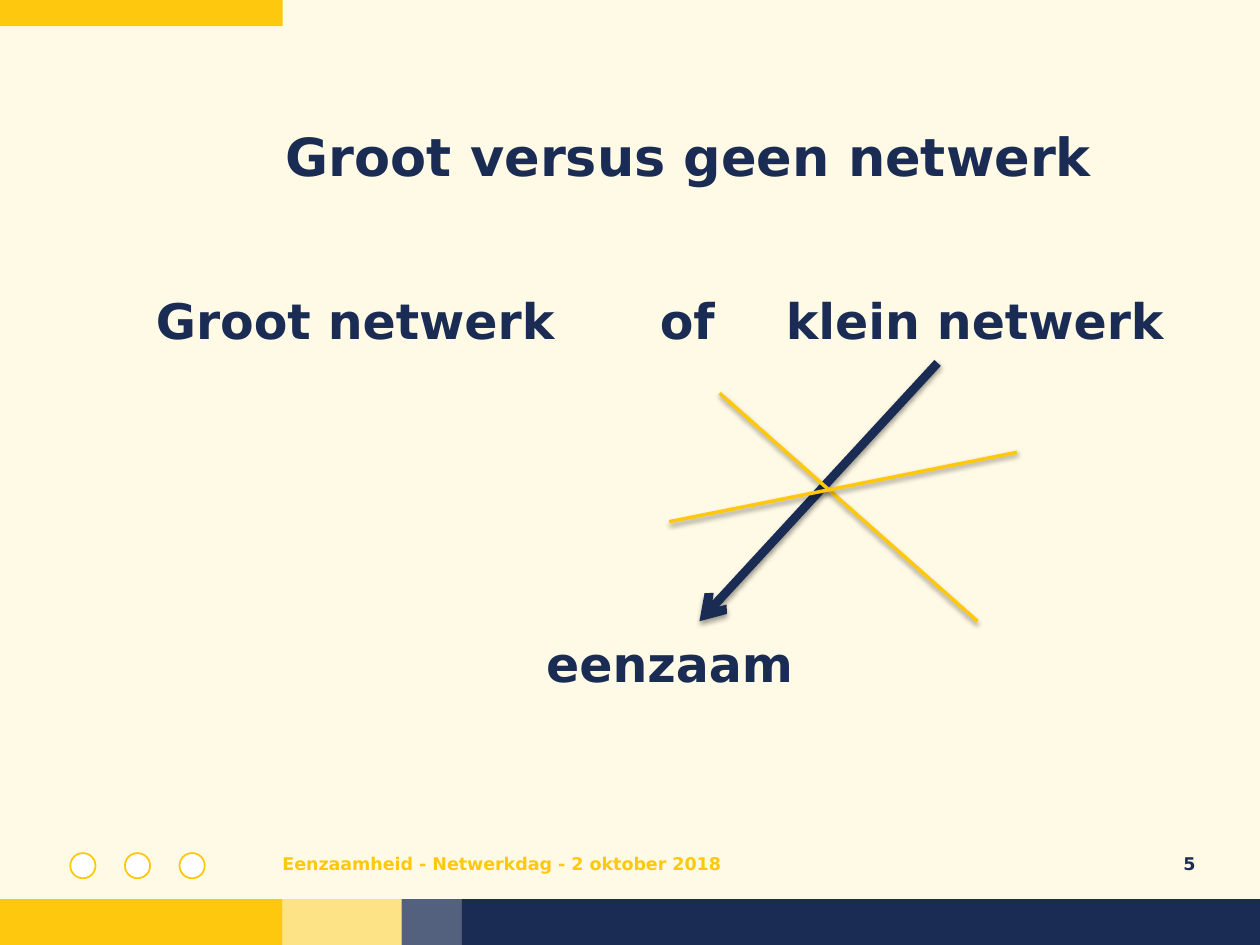
from dataclasses import dataclass

from lxml import etree
from pptx import Presentation
from pptx.dml.color import RGBColor
from pptx.enum import shapes, text
from pptx.oxml import ns
from pptx.util import Pt


@dataclass(frozen=True)
class Theme:
    """Colours, font and type sizes of the slide."""
    font: str = "DejaVu Sans"
    navy: str = "1A2C54"
    slate: str = "53607E"
    yellow: str = "FEC80F"
    ring: str = "FEC709"
    pale: str = "FEE386"
    cream: str = "FFFAE5"
    white: str = "FFFFFF"
    title: int = 30
    body: int = 28
    small: int = 10


T = Theme()


def rgb(value):
    """Return the colour for a hex string."""
    return RGBColor.from_string(value)


def add_plain(s, kind, box, fill, line=None):
    """Add a flat preset shape in the given box."""
    sp = s.shapes.add_shape(kind, *map(Pt, box))
    sp.shadow.inherit = False
    sp.fill.solid()
    sp.fill.fore_color.rgb = rgb(fill)
    if line:
        sp.line.color.rgb = rgb(line)
        sp.line.width = Pt(1)
    else:
        sp.line.fill.background()


def style(p, size, color, align=text.PP_ALIGN.LEFT):
    """Format a bold paragraph."""
    p.alignment = align
    p.font.name = T.font
    p.font.size = Pt(size)
    p.font.bold = True
    p.font.color.rgb = rgb(color)


def prepare(tf, inset_x=7.2, inset_y=3.6):
    """Set wrapping, top anchor and insets of a text frame."""
    tf.word_wrap = True
    tf.auto_size = text.MSO_AUTO_SIZE.NONE
    tf.vertical_anchor = text.MSO_ANCHOR.TOP
    tf.margin_left = tf.margin_right = Pt(inset_x)
    tf.margin_top = tf.margin_bottom = Pt(inset_y)


def add_backdrop(s, box):
    """Draw the cream ground, the top tab and the colour band below."""
    x, y, w, h = box
    rect = shapes.MSO_SHAPE.RECTANGLE
    band, tab = 26.2, 161.5
    add_plain(s, rect, (x, y, w, 519), T.cream)
    add_plain(s, rect, (x, y, tab, 15), T.yellow)
    left = x
    rest = w - tab - 68 - 34.5
    for width, fill in ((tab, T.yellow), (68, T.pale), (34.5, T.slate), (rest, T.navy)):
        add_plain(s, rect, (left, y + h - band, width, band), fill)
        left += width


def add_footer(s, box, footer, number):
    """Draw three rings, the footer text and the slide number."""
    x, y, w, h = box
    for i in range(3):
        ring = (x + i * 31.2, y, 14.4, 14.4)
        add_plain(s, shapes.MSO_SHAPE.OVAL, ring, T.white, T.ring)
    parts = (
        (x + 121.2, 374, footer, T.yellow, text.PP_ALIGN.LEFT),
        (x + w - 34, 34, number, T.navy, text.PP_ALIGN.RIGHT),
    )
    for left, width, words, color, align in parts:
        tf = s.shapes.add_textbox(Pt(left), Pt(y), Pt(width), Pt(h)).text_frame
        prepare(tf, 0, 0)
        p = tf.paragraphs[0]
        p.text = words
        style(p, T.small, color, align)


def add_title(s, box, words):
    """Bring the title placeholder to the front, place and format it."""
    sp = s.shapes.title
    s.shapes._spTree.append(sp._element)
    sp.left, sp.top, sp.width, sp.height = map(Pt, box)
    prepare(sp.text_frame)
    p = sp.text_frame.paragraphs[0]
    p.text = words
    style(p, T.title, T.navy)


def add_body(s, box, choices, outcome):
    """Write the choices on tab stops and the outcome centred below."""
    tf = s.shapes.add_textbox(*map(Pt, box)).text_frame
    prepare(tf)
    p = tf.paragraphs[0]
    p.text = "\t".join(choices)
    tabs = etree.SubElement(p._p.get_or_add_pPr(), ns.qn("a:tabLst"))
    for stop in (288, 360):
        etree.SubElement(tabs, ns.qn("a:tab"), pos=str(Pt(stop)), algn="l")
    style(p, T.body, T.navy)
    p = tf.add_paragraph()
    p.text = outcome
    p.space_before = Pt(162.6)
    style(p, T.body, T.navy, text.PP_ALIGN.CENTER)


def add_line(s, start, end, color, width, arrow=False):
    """Draw a line with a soft shadow and an optional arrowhead."""
    ends = map(Pt, (*start, *end))
    c = s.shapes.add_connector(shapes.MSO_CONNECTOR.STRAIGHT, *ends)
    c.line.color.rgb = rgb(color)
    c.line.width = Pt(width)
    if arrow:
        etree.SubElement(c.line._get_or_add_ln(), ns.qn("a:tailEnd"), type="arrow")
    effects = etree.SubElement(c._element.spPr, ns.qn("a:effectLst"))
    shadow = etree.SubElement(
        effects, ns.qn("a:outerShdw"), blurRad=str(Pt(3.1)), dist=str(Pt(1.6)),
        dir="5400000", rotWithShape="0")
    black = etree.SubElement(shadow, ns.qn("a:srgbClr"), val="000000")
    etree.SubElement(black, ns.qn("a:alpha"), val="38000")


def add_crossed_arrow(s, box):
    """Draw the arrow to the outcome and the two lines that strike it out."""
    x, y, w, h = box
    bottom = y + h
    add_line(s, (x + 153.4, y), (x + 17.3, bottom), T.navy, 5, arrow=True)
    add_line(s, (x + 28.8, y + 17.3), (x + 176.2, bottom), T.yellow, 2)
    add_line(s, (x, y + 90.7), (x + w, y + 51.1), T.yellow, 2)


def main():
    """Build the slide and save it."""
    prs = Presentation()
    prs.slide_width, prs.slide_height = Pt(720), Pt(540)
    s = prs.slides.add_slide(prs.slide_layouts[5])
    add_backdrop(s, (0, 0, 720, 540))
    add_footer(s, (40.2, 487.5, 643, 21), "Eenzaamheid - Netwerkdag - 2 oktober 2018", "5")
    add_title(s, (156.2, 67, 527, 90), "Groot versus geen netwerk")
    add_body(s, (82, 162.4, 601.2, 300), ("Groot netwerk", "of", "klein netwerk"), "eenzaam")
    add_crossed_arrow(s, (382.4, 207.4, 198.7, 147.6))
    prs.save("out.pptx")


if __name__ == "__main__":
    main()
